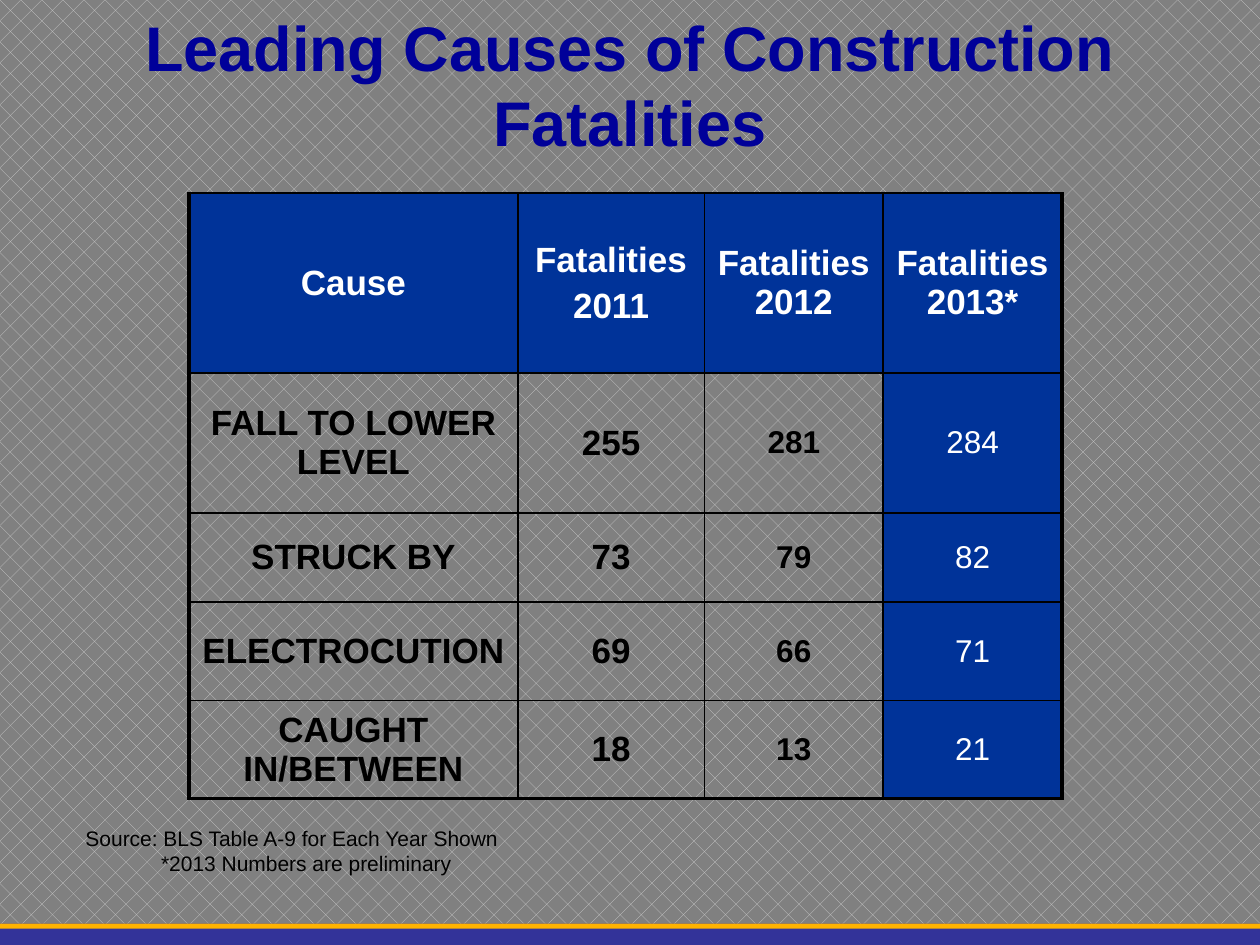
from lxml import etree
from pptx import Presentation
from pptx.dml.color import RGBColor
from pptx.enum import dml, shapes, text
from pptx.oxml import ns
from pptx.util import Inches, Pt


def rgb(value):
    return RGBColor.from_string(value)


def style(paragraph, size, color, bold, align):
    paragraph.alignment = align
    for run in paragraph.runs:
        run.font.name = "Arial"
        run.font.size = Pt(size)
        run.font.bold = bold
        run.font.color.rgb = rgb(color)


CENTER = text.PP_ALIGN.CENTER
NAVY = "003399"
prs = Presentation()
prs.slide_width, prs.slide_height = Inches(10), Inches(7.5)
slide = prs.slides.add_slide(prs.slide_layouts[5])

backdrop = slide.background.fill
backdrop.patterned()
backdrop.pattern = dml.MSO_PATTERN.DIAGONAL_BRICK
backdrop.fore_color.rgb = rgb("CFCFCF")
backdrop.back_color.rgb = rgb("808080")

for height, color in [(0.17, "333399"), (0.04, "FFB300")]:
    stripe = slide.shapes.add_shape(
        shapes.MSO_SHAPE.RECTANGLE, 0, Inches(7.33), Inches(10), Inches(height))
    stripe.shadow.inherit = False
    stripe.fill.solid()
    stripe.fill.fore_color.rgb = rgb(color)
    stripe.line.fill.background()

title = slide.shapes.title
title.left, title.top = Inches(0.5), Inches(0.04)
title.width, title.height = Inches(9), Inches(1.25)
title.text_frame.text = "Leading Causes of Construction Fatalities"
title.text_frame.auto_size = text.MSO_AUTO_SIZE.NONE
title.text_frame.vertical_anchor = text.MSO_ANCHOR.MIDDLE
style(title.text_frame.paragraphs[0], 36, "000099", True, CENTER)

rows = [
    ["Cause", "Fatalities\n2011", "Fatalities\n2012", "Fatalities\n2013*"],
    ["FALL TO LOWER LEVEL", "255", "281", "284"],
    ["STRUCK BY", "73", "79", "82"],
    ["ELECTROCUTION", "69", "66", "71"],
    ["CAUGHT IN/BETWEEN", "18", "13", "21"],
]
column_widths = [2.61, 1.48, 1.42, 1.42]
row_heights = [1.43, 1.11, 0.71, 0.78, 0.78]
last_row, last_column = len(rows) - 1, len(column_widths) - 1

fatalities = slide.shapes.add_table(
    len(rows), len(column_widths), Inches(1.5), Inches(1.53),
    Inches(sum(column_widths)), Inches(sum(row_heights))).table
fatalities.first_row = fatalities.horz_banding = False
for column, width in zip(fatalities.columns, column_widths):
    column.width = Inches(width)
for row, height in zip(fatalities.rows, row_heights):
    row.height = Inches(height)

for r, values in enumerate(rows):
    for c, value in enumerate(values):
        cell = fatalities.cell(r, c)
        cell.text_frame.text = value
        cell.vertical_anchor = text.MSO_ANCHOR.MIDDLE
        header, latest = r == 0, c == last_column
        size = 20 if header or c < 2 else 18
        color = "FFFFFF" if header or latest else "000000"
        for paragraph in cell.text_frame.paragraphs:
            style(paragraph, size, color, header or not latest, CENTER)

        thick = {"L": c == 0, "R": latest, "T": False, "B": r == last_row}
        for side, heavy in thick.items():
            border = etree.SubElement(
                cell._tc.get_or_add_tcPr(), ns.qn("a:ln" + side),
                w=str(Pt(2.25 if heavy else 1)))
            ink = etree.SubElement(border, ns.qn("a:solidFill"))
            etree.SubElement(ink, ns.qn("a:srgbClr"), val="000000")
        if header or latest:
            cell.fill.solid()
            cell.fill.fore_color.rgb = rgb(NAVY)
        else:
            cell.fill.background()

fatalities.cell(0, 1).text_frame.paragraphs[1].space_before = Pt(4)

source = slide.shapes.add_textbox(
    Inches(0.58), Inches(6.5), Inches(3.51), Inches(0.71)).text_frame
source.word_wrap = False
source.text = "Source: BLS Table A-9 for Each Year Shown\n*2013 Numbers are preliminary"
for paragraph in source.paragraphs:
    style(paragraph, 12, "000000", False, text.PP_ALIGN.LEFT)
source.paragraphs[1]._p.get_or_add_pPr().set("marL", str(Inches(0.6)))

prs.save("out.pptx")
